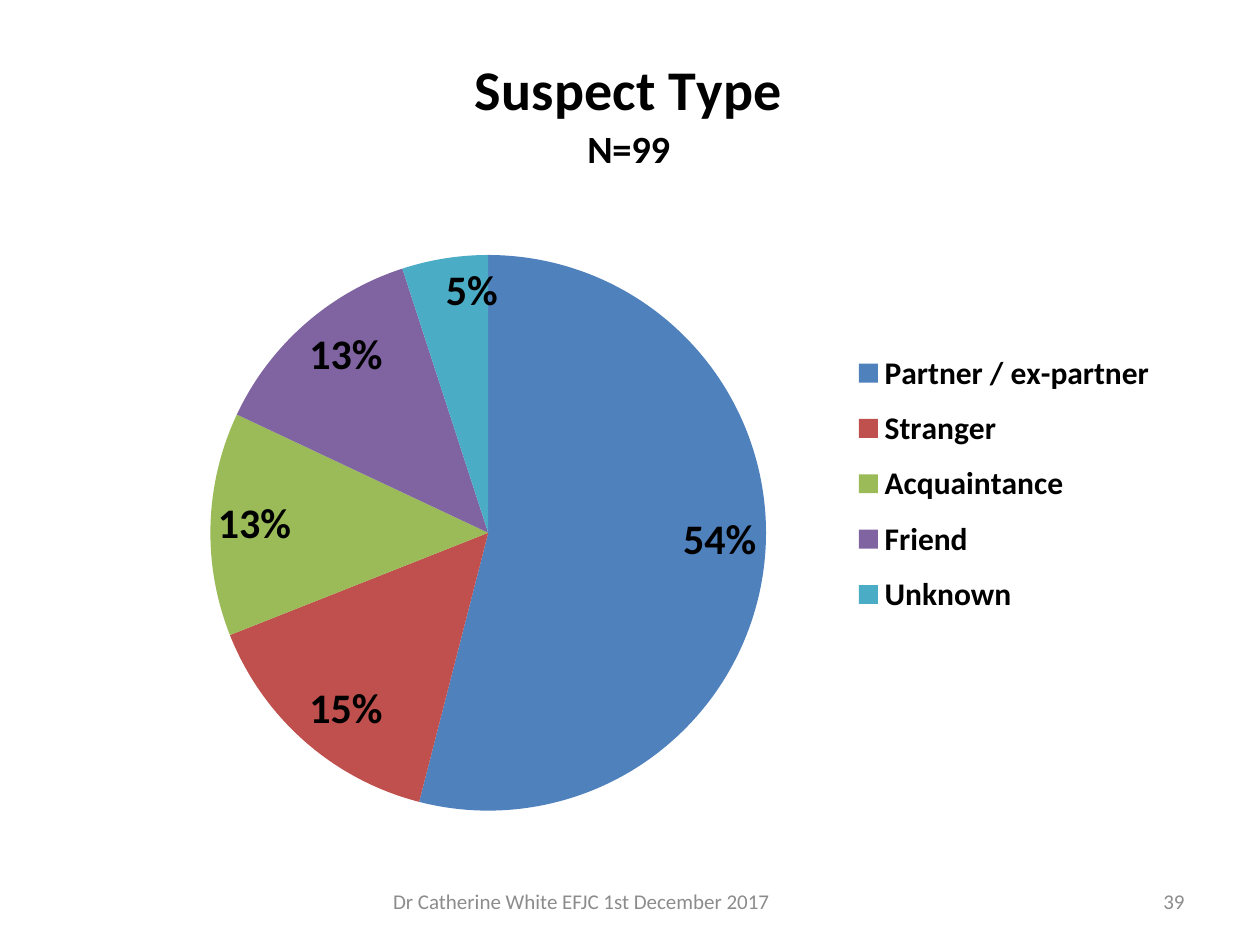
from lxml.etree import SubElement
from pptx import Presentation
from pptx.chart.data import CategoryChartData
from pptx.dml.color import RGBColor
from pptx.enum.chart import XL_CHART_TYPE, XL_LABEL_POSITION, XL_LEGEND_POSITION
from pptx.enum.text import MSO_ANCHOR, PP_ALIGN
from pptx.oxml.ns import qn
from pptx.util import Pt

THEME = {
    "font": "Calibri",
    "text": "000000",
    "muted": "8C8C8C",
    "title": 32,
    "subtitle": 22,
    "label": 24,
    "legend": 18,
    "footer": 12,
}
TITLE_LINES = [("Suspect Type", "title"), ("N=99", "subtitle")]
SUSPECTS = [
    ("Partner / ex-partner", 54, "4F81BD"),
    ("Stranger", 15, "C0504D"),
    ("Acquaintance", 13, "9BBB59"),
    ("Friend", 13, "8064A2"),
    ("Unknown", 5, "4BACC6"),
]
CHART_BOX = (36, 15, 648, 467)
TITLE_LAYOUT = {"x": 0.36, "y": 0.03}
PIE_LAYOUT = {"x": 0.13, "y": 0.28, "w": 0.49, "h": 0.68}
LEGEND_LAYOUT = {"x": 0.69, "y": 0.38, "w": 0.28, "h": 0.36}
FOOTERS = [
    ("Dr Catherine White EFJC 1st December 2017", (190, 500.5, 284.5, 29), PP_ALIGN.CENTER),
    ("39", (516, 500.5, 168, 29), PP_ALIGN.RIGHT),
]


def apply_format(target, values):
    """Set each named attribute on the target."""
    for name, value in values.items():
        setattr(target, name, value)


def style_font(font, size, bold=True, color="text"):
    """Apply the theme's typeface, size and colour to a font."""
    apply_format(font, {"name": THEME["font"], "size": Pt(THEME[size]), "bold": bold})
    font.color.rgb = RGBColor.from_string(THEME[color])


def set_layout(element, position, fractions):
    """Place a chart part by fractions of the chart area."""
    for previous in element.findall(qn("c:layout")):
        element.remove(previous)
    layout = SubElement(element, qn("c:layout"))
    element.insert(position, layout)
    manual = SubElement(layout, qn("c:manualLayout"))
    settings = {"layoutTarget": "inner"} if "plotArea" in element.tag else {}
    settings |= {"xMode": "edge", "yMode": "edge"} | fractions
    for name, value in settings.items():
        SubElement(manual, qn(f"c:{name}")).set("val", str(value))


def add_title(chart):
    """Write the chart title with one paragraph per line."""
    frame = chart.chart_title.text_frame
    for index, (text, size) in enumerate(TITLE_LINES):
        paragraph = frame.add_paragraph() if index else frame.paragraphs[0]
        run = paragraph.add_run()
        run.text = text
        style_font(run.font, size)
    chart.chart_title.include_in_layout = False
    set_layout(chart.chart_title._element, 1, TITLE_LAYOUT)


def add_pie(slide):
    """Add the suspect pie with its title, labels and legend."""
    names, values, colors = zip(*SUSPECTS)
    data = CategoryChartData()
    data.categories = names
    data.add_series("Series 1", values)
    box = [Pt(length) for length in CHART_BOX]
    chart = slide.shapes.add_chart(XL_CHART_TYPE.PIE, *box, data).chart
    style_font(chart.font, "legend", bold=False)
    add_title(chart)

    plot = chart.plots[0]
    apply_format(plot, {"vary_by_categories": True, "has_data_labels": True})
    for index, color in enumerate(colors):
        fill = plot.series[0].points[index].format.fill
        fill.solid()
        fill.fore_color.rgb = RGBColor.from_string(color)
    apply_format(plot.data_labels, {
        "show_percentage": True,
        "show_value": False,
        "number_format": "0%",
        "number_format_is_linked": False,
        "position": XL_LABEL_POSITION.INSIDE_END,
    })
    style_font(plot.data_labels.font, "label")
    set_layout(plot._element.getparent(), 0, PIE_LAYOUT)

    chart.has_legend = True
    apply_format(chart.legend, {"position": XL_LEGEND_POSITION.RIGHT, "include_in_layout": False})
    style_font(chart.legend.font, "legend")
    set_layout(chart.legend._element, 1, LEGEND_LAYOUT)


def add_footer(slide, text, box, alignment):
    """Add one muted line at the foot of the slide."""
    frame = slide.shapes.add_textbox(*[Pt(length) for length in box]).text_frame
    apply_format(frame, {"word_wrap": True, "vertical_anchor": MSO_ANCHOR.MIDDLE})
    paragraph = frame.paragraphs[0]
    apply_format(paragraph, {"text": text, "alignment": alignment})
    style_font(paragraph.runs[0].font, "footer", bold=False, color="muted")


def main():
    """Build the slide and save it."""
    presentation = Presentation()
    apply_format(presentation, {"slide_width": Pt(720), "slide_height": Pt(540)})
    slide = presentation.slides.add_slide(presentation.slide_layouts[6])
    add_pie(slide)
    for footer in FOOTERS:
        add_footer(slide, *footer)
    presentation.save("out.pptx")


if __name__ == "__main__":
    main()
